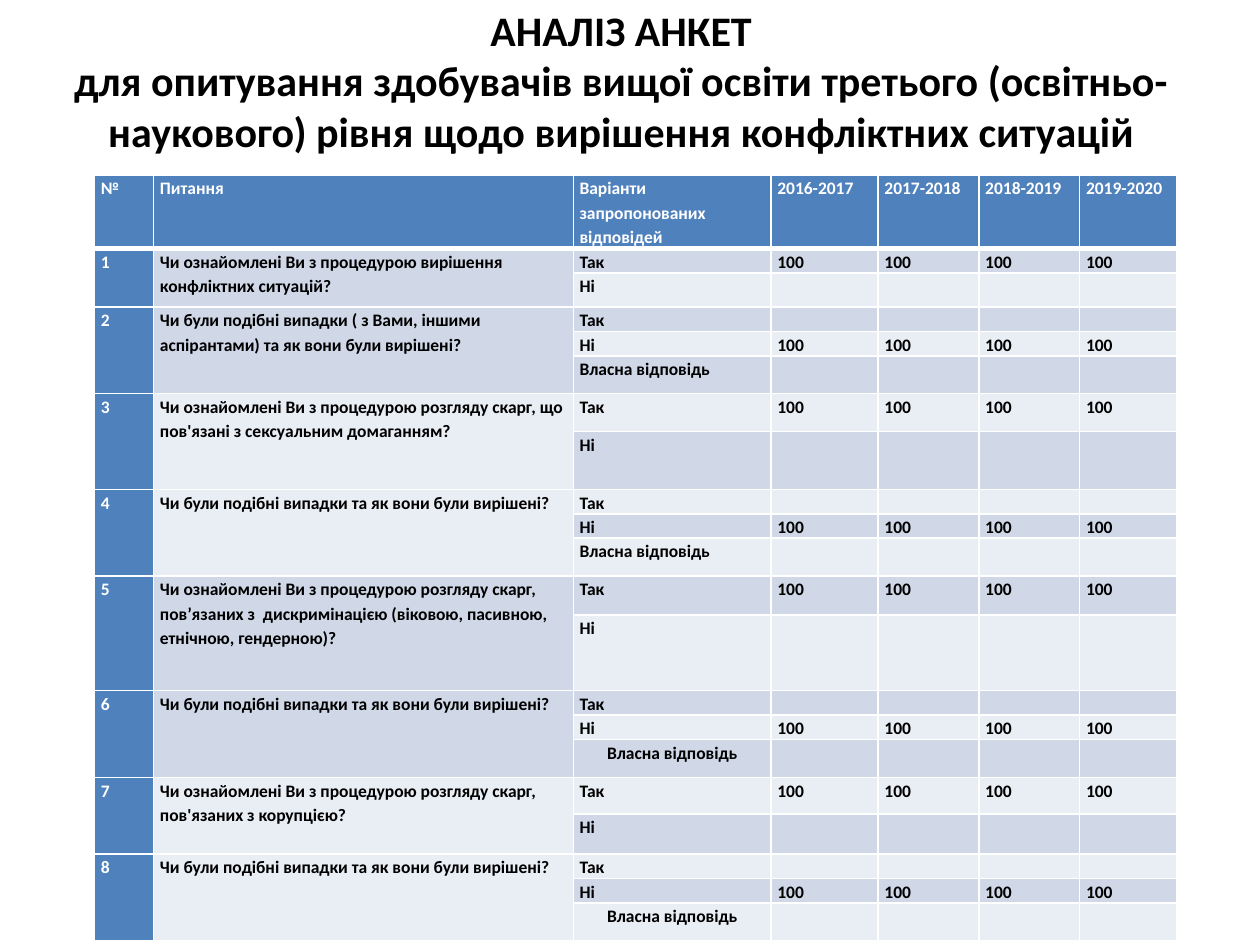
from lxml import etree
from pptx import Presentation
from pptx import util as u
from pptx.dml.color import RGBColor
from pptx.enum import text
from pptx.oxml.ns import qn

WHITE, BLACK, BLUE = "FFFFFF", "000000", "4F81BD"
BANDS = ("E9EDF4", "D0D8E8")

COLS = (4.7, 33.3, 15.7, 8.5, 8, 8, 7.7)
ROWS = (4.5, 1.8, 2.7, 1.4, 1.7, 3, 3, 4.6, 1.4, 1.4, 3,
        3.1, 6, 1.4, 1.6, 3, 2.9, 3.2, 1.4, 1.7, 3)
HEADER = ("№", "Питання", "Варіанти запропонованих відповідей",
          "2016-2017", "2017-2018", "2018-2019", "2019-2020")
YES, NO, OWN = "Так", "Ні", "Власна відповідь"
CASES = "Чи були подібні випадки та як вони були вирішені?"
KNOWN = ((YES, 100), (NO, None))
HAPPENED = ((YES, None), (NO, 100), (OWN, None))
QUESTIONS = (
    ("Чи ознайомлені Ви з процедурою вирішення конфліктних ситуацій?", KNOWN),
    ("Чи були подібні випадки ( з Вами, іншими аспірантами) та як вони були вирішені?", HAPPENED),
    ("Чи ознайомлені Ви з процедурою розгляду скарг, що пов'язані з сексуальним домаганням?", KNOWN),
    (CASES, HAPPENED),
    ("Чи ознайомлені Ви з процедурою розгляду скарг, пов’язаних з  дискримінацією "
     "(віковою, пасивною, етнічною, гендерною)?", KNOWN),
    (CASES, HAPPENED),
    ("Чи ознайомлені Ви з процедурою розгляду скарг, пов'язаних з корупцією?", KNOWN),
    (CASES, HAPPENED),
)
CENTERED_OWN = (6, 8)


def rgb(color):
    return RGBColor.from_string(color)


class Deck:
    font = "Calibri"
    title_size, cell_size = 24, 10
    grid_cols, grid_rows = 100, 75

    def __init__(self):
        self.prs = Presentation()
        self.prs.slide_width, self.prs.slide_height = u.Inches(10), u.Inches(7.5)
        self.s = self.prs.slides.add_slide(self.prs.slide_layouts[5])

    def x(self, cols):
        return round(self.prs.slide_width * cols / self.grid_cols)

    def y(self, rows):
        return round(self.prs.slide_height * rows / self.grid_rows)

    def run(self, p, words, size, color):
        r = p.add_run()
        r.text = words
        r.font.name, r.font.size, r.font.bold = self.font, u.Pt(size), True
        r.font.color.rgb = rgb(color)

    def title(self, lines, left, top, width, height):
        sp = self.s.shapes.title
        sp.left, sp.top = self.x(left), self.y(top)
        sp.width, sp.height = self.x(width), self.y(height)
        tf = sp.text_frame
        tf.word_wrap, tf.auto_size = True, text.MSO_AUTO_SIZE.NONE
        tf.vertical_anchor = text.MSO_ANCHOR.MIDDLE
        p = tf.paragraphs[0]
        p.alignment = text.PP_ALIGN.CENTER
        for i, line in enumerate(lines):
            if i:
                p.add_line_break()
            self.run(p, line, self.title_size, BLACK)

    def table(self, left, top, cols, rows):
        frame = self.s.shapes.add_table(len(rows), len(cols), self.x(left), self.y(top),
                                        self.x(sum(cols)), self.y(sum(rows)))
        tbl = frame.table
        for col, width in zip(tbl.columns, cols):
            col.width = self.x(width)
        for row, height in zip(tbl.rows, rows):
            row.height = self.y(height)
        return tbl

    def borders(self, cell, bottom):
        tc_pr = cell._tc.get_or_add_tcPr()
        for side, width in (("L", 1), ("R", 1), ("T", 1), ("B", bottom)):
            ln = etree.SubElement(tc_pr, qn(f"a:ln{side}"), w=str(u.Pt(width)))
            fill = etree.SubElement(ln, qn("a:solidFill"))
            etree.SubElement(fill, qn("a:srgbClr"), val=WHITE)

    def cell(self, cell, words, fill, color=BLACK, bottom=1, centered=False):
        self.borders(cell, bottom)
        cell.fill.solid()
        cell.fill.fore_color.rgb = rgb(fill)
        cell.margin_left = cell.margin_right = u.Inches(0.05)
        cell.margin_top = cell.margin_bottom = 0
        p = cell.text_frame.paragraphs[0]
        p.line_spacing = 1.15
        if centered:
            p.alignment = text.PP_ALIGN.CENTER
        if words:
            self.run(p, words, self.cell_size, color)
        else:
            etree.SubElement(p._p, qn("a:endParaRPr"), sz=str(self.cell_size * 100))


def main():
    deck = Deck()
    deck.title(("АНАЛІЗ АНКЕТ",
                "для опитування здобувачів вищої освіти третього (освітньо-наукового) "
                "рівня щодо вирішення конфліктних ситуацій"), 4.3, 0.1, 90, 12.5)
    tbl = deck.table(7.5, 13.9, COLS, ROWS)
    for c, words in enumerate(HEADER):
        deck.cell(tbl.cell(0, c), words, BLUE, WHITE, bottom=3)

    row = 1
    for number, (question, answers) in enumerate(QUESTIONS, 1):
        last = row + len(answers) - 1
        for c in (0, 1):
            tbl.cell(row, c).merge(tbl.cell(last, c))
        deck.cell(tbl.cell(row, 0), str(number), BLUE, WHITE)
        deck.cell(tbl.cell(row, 1), question, BANDS[row % 2])
        for r, (answer, value) in enumerate(answers, row):
            band = BANDS[r % 2]
            deck.cell(tbl.cell(r, 2), answer, band,
                      centered=answer == OWN and number in CENTERED_OWN)
            for c in range(3, len(COLS)):
                deck.cell(tbl.cell(r, c), str(value) if value else "", band)
        row = last + 1
    deck.prs.save("out.pptx")


if __name__ == "__main__":
    main()
